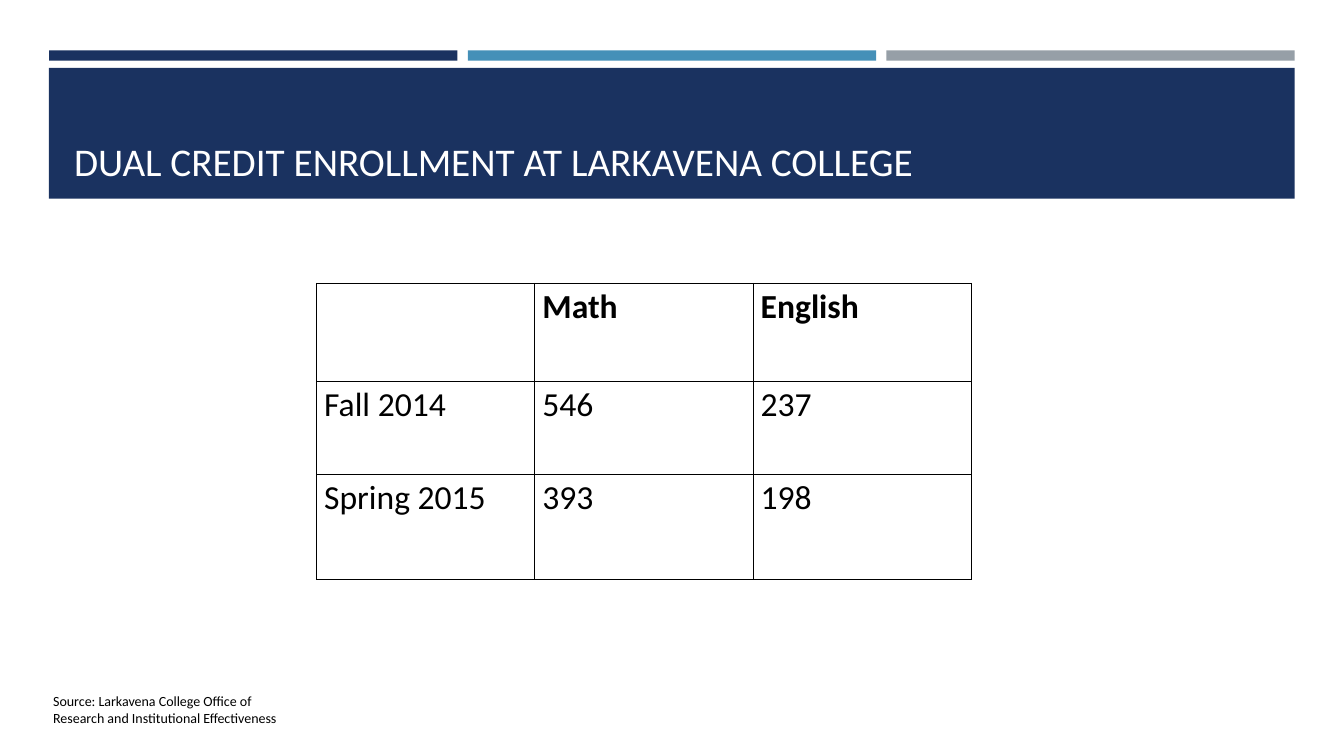
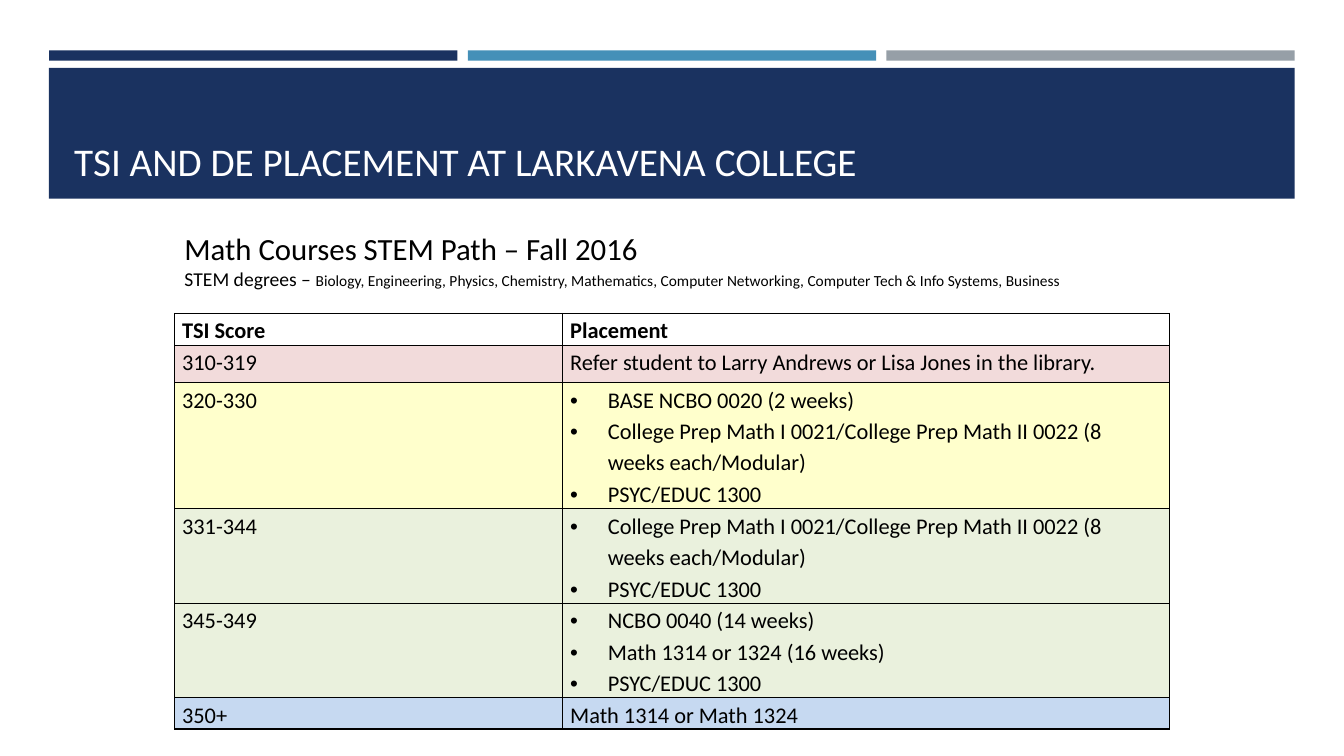
from lxml.etree import SubElement
from pptx import Presentation
from pptx.dml.color import RGBColor
from pptx.enum.shapes import MSO_SHAPE
from pptx.enum.text import MSO_ANCHOR
from pptx.oxml.ns import qn
from pptx.util import Cm, Pt

NAVY = RGBColor(0x1A, 0x32, 0x60)
BLUE = RGBColor(0x45, 0x90, 0xB8)
GRAY = RGBColor(0x96, 0x9F, 0xA7)
WHITE = RGBColor(0xFF, 0xFF, 0xFF)
BLACK = RGBColor(0x00, 0x00, 0x00)
PINK = RGBColor(0xF2, 0xDB, 0xDB)
YELLOW = RGBColor(0xFF, 0xFF, 0xCC)
GREEN = RGBColor(0xEA, 0xF1, 0xDD)
PALE_BLUE = RGBColor(0xC6, 0xD9, 0xF1)
FONT = "Calibri"
BULLET_INDENT = Cm(0.95)

TITLES = [
    "DUAL CREDIT ENROLLMENT AT LARKAVENA COLLEGE",
    "TSI AND DE PLACEMENT AT LARKAVENA COLLEGE",
]
ENROLLMENT = [
    ["", "Math", "English"],
    ["Fall 2014", "546", "237"],
    ["Spring 2015", "393", "198"],
]
PREP_MATH = "College Prep Math I 0021/College Prep Math II 0022 (8 weeks each/Modular)"
SEMINAR = "PSYC/EDUC 1300"
PLACEMENT = [
    ["TSI Score", "Placement"],
    ["310-319", "Refer student to Larry Andrews or Lisa Jones in the library."],
    ["320-330", ["BASE NCBO 0020 (2 weeks)", PREP_MATH, SEMINAR]],
    ["331-344", [PREP_MATH, SEMINAR]],
    ["345-349", ["NCBO 0040 (14 weeks)", "Math 1314 or 1324 (16 weeks)", SEMINAR]],
    ["350+", "Math 1314 or Math 1324"],
]


def add_text(slide, left, top, width, height, lines, color=BLACK, anchor=MSO_ANCHOR.TOP):
    """Add a wrapping text box; each line is a list of (text, size) spans."""
    box = slide.shapes.add_textbox(Cm(left), Cm(top), Cm(width), Cm(height))
    frame = box.text_frame
    frame.word_wrap = True
    frame.vertical_anchor = anchor
    for index, spans in enumerate(lines):
        para = frame.add_paragraph() if index else frame.paragraphs[0]
        for text, size in spans:
            span = para.add_run()
            span.text = text
            span.font.name = FONT
            span.font.size = Pt(size)
            span.font.color.rgb = color


def add_grid(slide, left, top, widths, heights, rows, fills, size, spacing):
    """Add a black-ruled table with a bold first row; a list in a cell is bulleted."""
    table = slide.shapes.add_table(
        len(rows), len(widths), Cm(left), Cm(top), Cm(sum(widths)), Cm(sum(heights))
    ).table
    table.first_row = False
    table.horz_banding = False
    for column, width in zip(table.columns, widths):
        column.width = Cm(width)
    for row_index, (row, values, fill) in enumerate(zip(table.rows, rows, fills)):
        row.height = Cm(heights[row_index])
        for cell, value in zip(row.cells, values):
            cell.margin_left = cell.margin_right = Cm(0.19)
            cell.margin_top = cell.margin_bottom = 0
            properties = cell._tc.get_or_add_tcPr()
            for side in ("a:lnL", "a:lnR", "a:lnT", "a:lnB"):
                border = SubElement(properties, qn(side), w=str(Pt(1)))
                line_fill = SubElement(border, qn("a:solidFill"))
                SubElement(line_fill, qn("a:srgbClr"), val=str(BLACK))
            if fill is None:
                cell.fill.background()
            else:
                cell.fill.solid()
                cell.fill.fore_color.rgb = fill
            bulleted = isinstance(value, list)
            cell.text_frame.text = "\n".join(value) if bulleted else value
            for para in cell.text_frame.paragraphs:
                para.line_spacing = spacing
                if bulleted:
                    format_xml = para._p.get_or_add_pPr()
                    format_xml.set("marL", str(BULLET_INDENT))
                    format_xml.set("indent", str(-BULLET_INDENT))
                    SubElement(format_xml, qn("a:buFont"), typeface="Arial")
                    SubElement(format_xml, qn("a:buChar"), char="•")
                for span in para.runs:
                    span.font.name = FONT
                    span.font.size = Pt(size)
                    span.font.bold = row_index == 0
                    span.font.color.rgb = BLACK


deck = Presentation()
deck.slide_width = Cm(33.87)
deck.slide_height = Cm(19.05)

# Shared bands and title
bands = [(1.24 + 10.55 * i, 1.27, 10.29, 0.26, color) for i, color in enumerate([NAVY, BLUE, GRAY])]
bands.append((1.23, 1.71, 31.4, 3.3, NAVY))
for title in TITLES:
    slide = deck.slides.add_slide(deck.slide_layouts[6])
    for left, top, width, height, color in bands:
        band = slide.shapes.add_shape(MSO_SHAPE.RECTANGLE, Cm(left), Cm(top), Cm(width), Cm(height))
        band.shadow.inherit = False
        band.fill.solid()
        band.fill.fore_color.rgb = color
        band.line.fill.background()
    add_text(slide, 1.62, 1.96, 30.63, 2.82, [[(title, 28)]], WHITE, MSO_ANCHOR.BOTTOM)

enrollment_slide, placement_slide = deck.slides

# Enrollment
source = "Source: Larkavena College Office of Research and Institutional Effectiveness"
add_text(enrollment_slide, 1.09, 17.33, 6.6, 1.12, [[(source, 10)]])
add_grid(enrollment_slide, 7.98, 7.14, [5.5] * 3, [2.47, 2.34, 2.66],
         ENROLLMENT, [None] * 3, 24, 1.07)

# Placement
row_fills = [None, PINK, YELLOW, GREEN, GREEN, PALE_BLUE]
add_grid(placement_slide, 4.4, 7.9, [9.78, 15.29], [0.8, 0.94, 3.18, 2.38, 2.38, 0.79],
         PLACEMENT, row_fills, 16, 1.15)
degrees = ("Biology, Engineering, Physics, Chemistry, Mathematics, Computer Networking, "
           "Computer Tech & Info Systems, Business")
heading = [
    [("Math Courses STEM Path – Fall 2016", 22)],
    [("STEM degrees – ", 14), (degrees, 11)],
]
add_text(placement_slide, 4.4, 5.65, 25.07, 1.8, heading, anchor=MSO_ANCHOR.MIDDLE)

deck.save("out.pptx")
